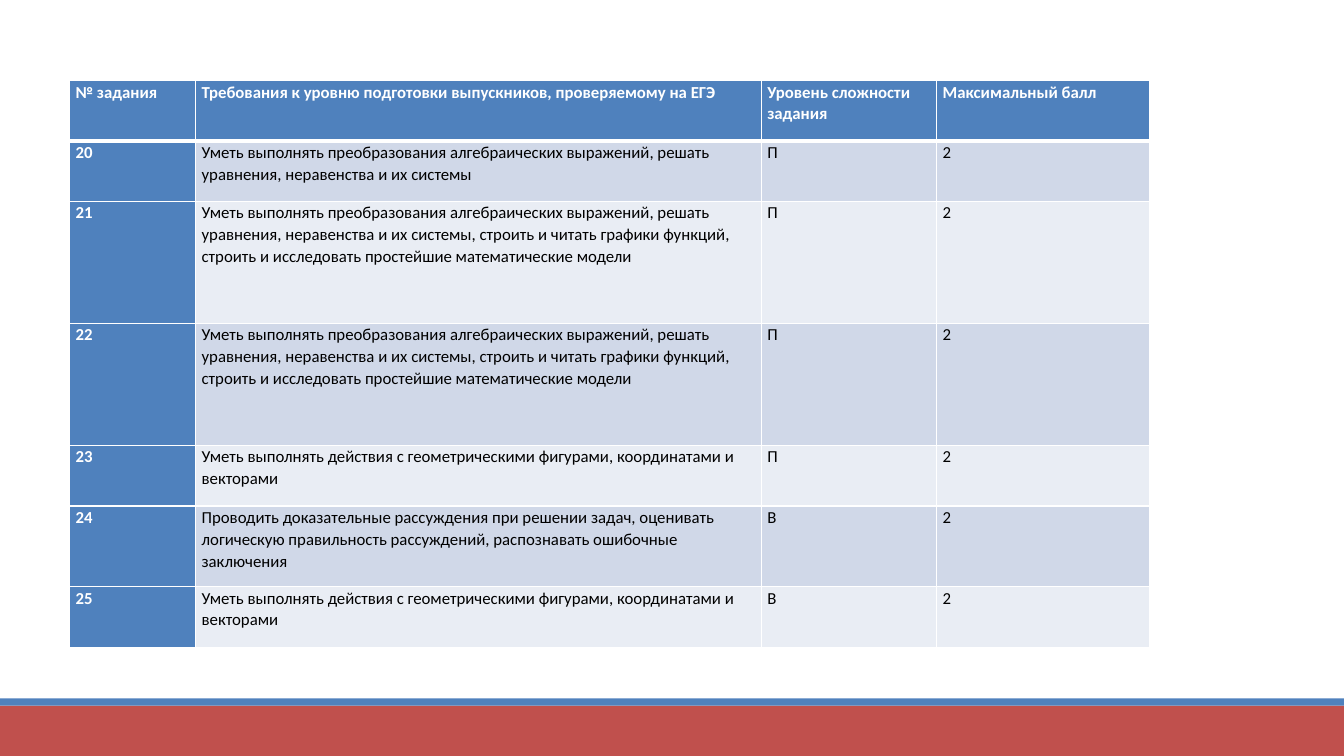
"""Build a slide with a table of exam tasks, required skills, levels and points."""
from lxml.etree import SubElement
from pptx import Presentation
from pptx.dml.color import RGBColor
from pptx.enum.shapes import MSO_SHAPE
from pptx.oxml.ns import qn
from pptx.util import Inches, Pt

COLORS = {
    "white": "FFFFFF",
    "black": "000000",
    "blue": "4F81BD",
    "red": "C0504D",
    "dark_band": "D0D8E8",
    "light_band": "E9EDF4",
}

ALGEBRA = (
    "Уметь выполнять преобразования алгебраических выражений, "
    "решать уравнения, неравенства и их системы"
)
MODELS = (
    ALGEBRA + ", строить и читать графики функций, "
    "строить и исследовать простейшие математические модели"
)
GEOMETRY = (
    "Уметь выполнять действия с геометрическими фигурами, координатами и векторами"
)
PROOF = (
    "Проводить доказательные рассуждения при решении задач, оценивать "
    "логическую правильность рассуждений, распознавать ошибочные заключения"
)
HEADER = (
    "№ задания",
    "Требования к уровню подготовки выпускников, проверяемому на ЕГЭ",
    "Уровень сложности задания",
    "Максимальный балл",
)
TASKS = [
    ("20", ALGEBRA, "П", "2"),
    ("21", MODELS, "П", "2"),
    ("22", MODELS, "П", "2"),
    ("23", GEOMETRY, "П", "2"),
    ("24", PROOF, "В", "2"),
    ("25", GEOMETRY, "В", "2"),
]
COLUMN_WIDTHS = [1.25, 5.61, 1.74, 2.11]
ROW_HEIGHTS = [0.6, 0.6, 1.21, 1.21, 0.6, 0.8, 0.6]


def write_text(cell, text, color="black", bold=False, size=12, font="Calibri"):
    cell.margin_left = cell.margin_right = Inches(0.06)
    cell.margin_top = cell.margin_bottom = 0
    para = cell.text_frame.paragraphs[0]
    para.line_spacing = 1.07
    span = para.add_run()
    span.text = text
    span.font.name = font
    span.font.size = Pt(size)
    span.font.bold = bold
    span.font.color.rgb = RGBColor.from_string(COLORS[color])


def draw_borders(cell, top=1, bottom=1):
    properties = cell._tc.get_or_add_tcPr()
    for side, width in (("L", 1), ("R", 1), ("T", top), ("B", bottom)):
        line = SubElement(properties, qn(f"a:ln{side}"), w=str(Pt(width)))
        fill = SubElement(line, qn("a:solidFill"))
        SubElement(fill, qn("a:srgbClr"), val=COLORS["white"])


deck = Presentation()
deck.slide_width = Inches(13.33)
deck.slide_height = Inches(7.5)
page = deck.slides.add_slide(deck.slide_layouts[6])

for top, height, color in ((7, 0.5, "red"), (6.93, 0.07, "blue")):
    strip = page.shapes.add_shape(
        MSO_SHAPE.RECTANGLE, 0, Inches(top), deck.slide_width, Inches(height)
    )
    strip.shadow.inherit = False
    strip.fill.solid()
    strip.fill.fore_color.rgb = RGBColor.from_string(COLORS[color])
    strip.line.fill.background()

table = page.shapes.add_table(
    len(ROW_HEIGHTS), len(COLUMN_WIDTHS), Inches(0.69), Inches(0.8),
    Inches(sum(COLUMN_WIDTHS)), Inches(sum(ROW_HEIGHTS)),
).table
table.first_col = True
for column, width in zip(table.columns, COLUMN_WIDTHS):
    column.width = Inches(width)
for row, height in zip(table.rows, ROW_HEIGHTS):
    row.height = Inches(height)

for row_index, texts in enumerate([HEADER] + TASKS):
    band = "dark_band" if row_index % 2 else "light_band"
    for column_index, text in enumerate(texts):
        cell = table.cell(row_index, column_index)
        heading = row_index == 0 or column_index == 0
        write_text(cell, text, color="white" if heading else "black", bold=heading)
        draw_borders(
            cell,
            top=3 if row_index == 1 else 1,
            bottom=3 if row_index == 0 else 1,
        )
        cell.fill.solid()
        cell.fill.fore_color.rgb = RGBColor.from_string(
            COLORS["blue" if heading else band]
        )

deck.save("out.pptx")
